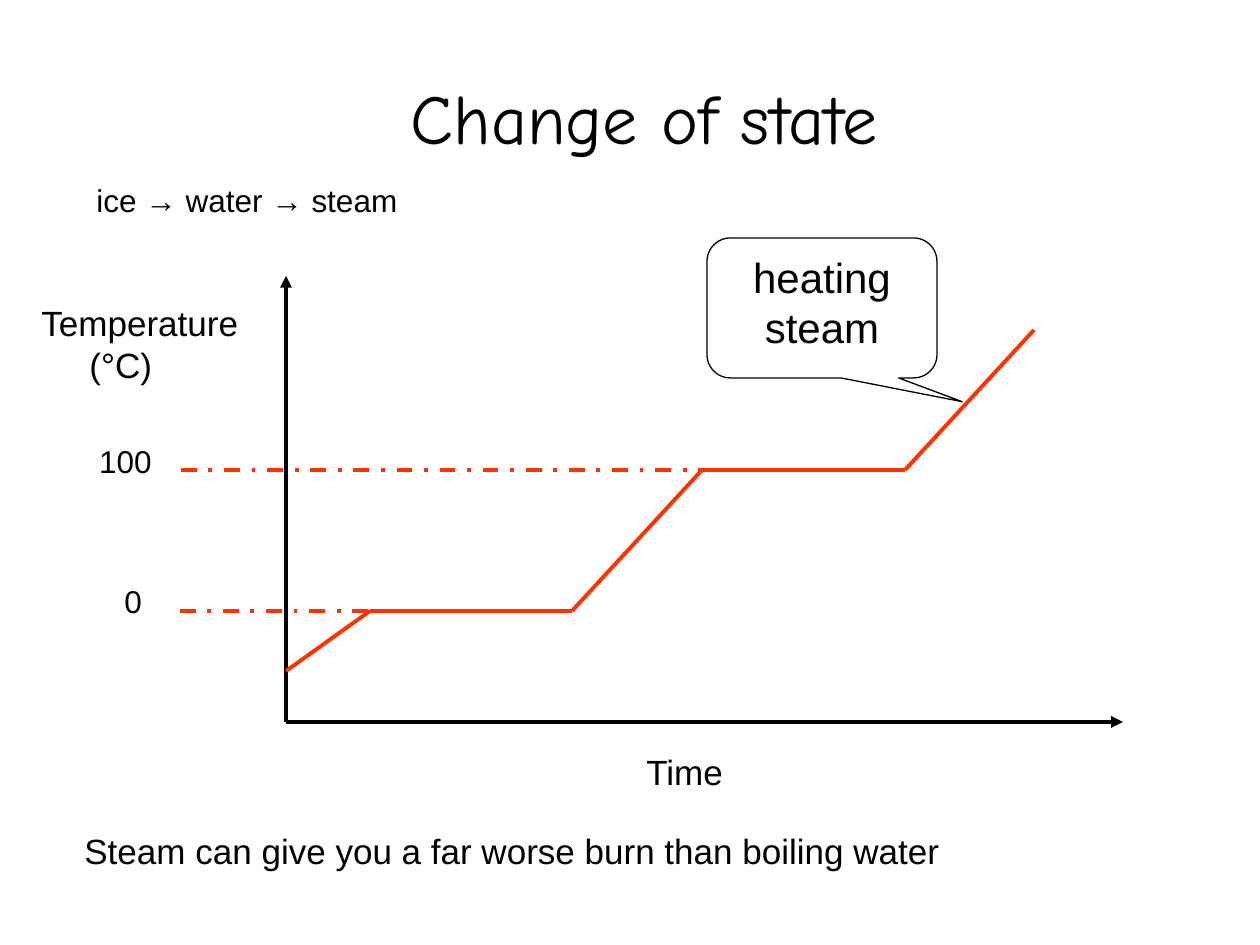
import pptx
import pptx.util
import pptx.dml.color
import pptx.enum.dml
import pptx.enum.shapes
import pptx.enum.text
import pptx.oxml
import pptx.oxml.ns
from dataclasses import dataclass

EMU_PER_PX = 914400 / 126
ALIGN = pptx.enum.text.PP_ALIGN


@dataclass(frozen=True)
class Theme:
    ink: str = "000000"
    curve: str = "FF3300"
    title_font: str = "Comic Neue"
    body_font: str = "Arial"
    title_size: int = 40
    callout_size: int = 24
    label_size: int = 20
    small_size: int = 18
    graph_width: float = 2.25
    outline_width: float = 0.75
    hanging: int = 48


THEME = Theme()


def px(*lengths):
    return [pptx.util.Emu(round(length * EMU_PER_PX)) for length in lengths]


def color(code):
    return pptx.dml.color.RGBColor.from_string(code)


def add_xml(parent, tag, **attributes):
    child = pptx.oxml.ns.qn(tag)
    element = parent.makeelement(child, attributes)
    parent.append(element)


def write(shape, lines, size, font=THEME.body_font, align=ALIGN.LEFT, hanging=False):
    """Fill a shape with one paragraph per line, in one style."""
    frame = shape.text_frame
    frame.text = "\n".join(lines)
    for para in frame.paragraphs:
        if hanging:
            indent = px(THEME.hanging)[0]
            properties = para._p.get_or_add_pPr()
            properties.set("marL", str(indent))
            properties.set("indent", str(-indent))
        para.alignment = align
        para.font.name = font
        para.font.size = pptx.util.Pt(size)
        para.font.color.rgb = color(THEME.ink)


def add_title(page, text, place):
    title = page.shapes.title
    title.left, title.top, title.width, title.height = px(*place)
    title.text_frame.vertical_anchor = pptx.enum.text.MSO_ANCHOR.MIDDLE
    write(title, [text], THEME.title_size, THEME.title_font, ALIGN.CENTER)


def add_text(page, text, place, size, align=ALIGN.LEFT, hanging=False):
    box = page.shapes.add_textbox(*px(*place))
    box.text_frame.word_wrap = True
    write(box, [text], size, align=align, hanging=hanging)


def add_line(page, start, end, code, dashed=False, arrow=False):
    connector = page.shapes.add_connector(
        pptx.enum.shapes.MSO_CONNECTOR.STRAIGHT, *px(*start, *end))
    connector.line.color.rgb = color(code)
    connector.line.width = pptx.util.Pt(THEME.graph_width)
    if dashed:
        connector.line.dash_style = pptx.enum.dml.MSO_LINE.DASH_DOT
    if arrow:
        add_xml(connector.line._get_or_add_ln(), "a:tailEnd", type="triangle")
    add_xml(connector._element.spPr, "a:effectLst")


def add_callout(page, lines, place):
    callout = page.shapes.add_shape(
        pptx.enum.shapes.MSO_SHAPE.ROUNDED_RECTANGULAR_CALLOUT, *px(*place))
    for index, value in enumerate((0.61, 0.67, 0.167)):
        callout.adjustments[index] = value
    callout.shadow.inherit = False
    callout.fill.background()
    callout.line.color.rgb = color(THEME.ink)
    callout.line.width = pptx.util.Pt(THEME.outline_width)
    callout.text_frame.vertical_anchor = pptx.enum.text.MSO_ANCHOR.TOP
    write(callout, lines, THEME.callout_size, align=ALIGN.CENTER, hanging=True)


def add_heating_curve(page):
    origin = (286, 722)
    boiling, freezing = 470, 611
    for end in ((286, 276), (1123, 722)):
        add_line(page, origin, end, THEME.ink, arrow=True)

    add_line(page, (368, freezing), (180, freezing), THEME.curve, dashed=True)
    add_line(page, (714, boiling), (180, boiling), THEME.curve, dashed=True)

    curve = [(286, 671), (370, freezing), (572, freezing),
             (702, boiling), (905, boiling), (1034, 330)]
    for start, end in zip(curve, curve[1:]):
        add_line(page, start, end, THEME.curve)


def main():
    deck = pptx.Presentation()
    deck.slide_width, deck.slide_height = px(1260, 945)
    page = deck.slides.add_slide(deck.slide_layouts[5])

    add_title(page, "Change of state", (64, 38, 1160, 158))
    add_text(page, "ice → water → steam", (84, 175, 1111, 72), THEME.small_size)
    add_heating_curve(page)

    add_text(page, "Temperature (°C)", (29, 295, 244, 97), THEME.label_size, hanging=True)
    add_text(page, "Time", (634, 744, 113, 54), THEME.label_size, hanging=True)
    add_text(page, "100", (39, 436, 125, 72), THEME.small_size, ALIGN.RIGHT, hanging=True)
    add_text(page, "0", (112, 576, 56, 72), THEME.small_size, hanging=True)

    add_callout(page, ["heating", "steam"], (707, 238, 230, 140))
    add_text(page, "Steam can give you a far worse burn than boiling water",
             (72, 823, 1101, 54), THEME.label_size)
    deck.save("out.pptx")


if __name__ == "__main__":
    main()
